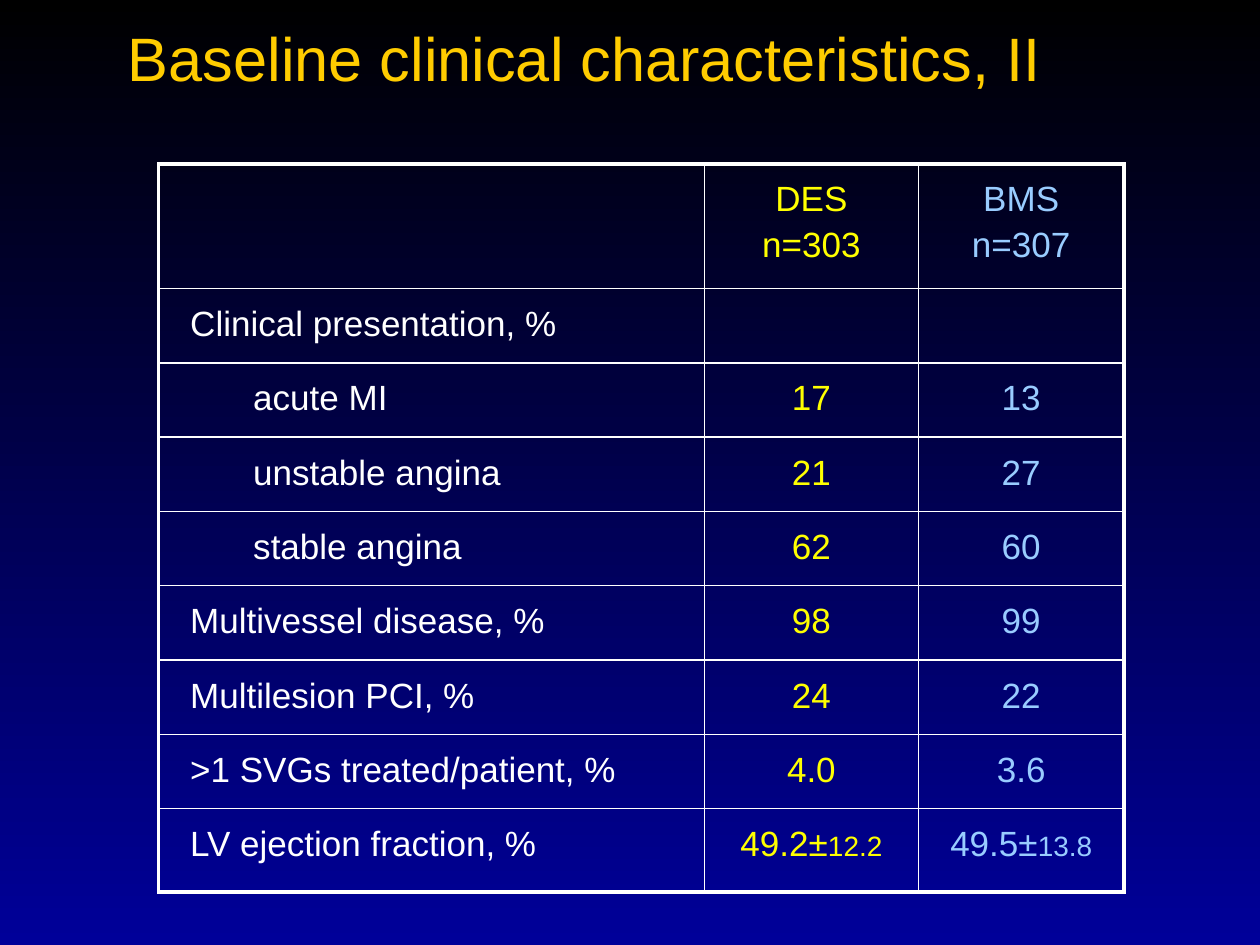
from dataclasses import dataclass

from lxml.etree import SubElement
from pptx import Presentation
from pptx.dml.color import RGBColor
from pptx.enum.text import MSO_ANCHOR, PP_ALIGN
from pptx.oxml.ns import qn
from pptx.util import Inches, Pt


@dataclass(frozen=True)
class Theme:
    font: str = "Arial"
    title: str = "FFCC00"
    label: str = "FFFFFF"
    des: str = "FFFF00"
    bms: str = "99CCFF"
    border: str = "FFFFFF"
    background: tuple = ("000000", "000099")
    title_size: int = 35
    body_size: int = 20
    deviation_size: int = 16
    outer_line: float = 2.25
    inner_line: float = 1


THEME = Theme()


def style_run(run, size, color):
    run.font.name = THEME.font
    run.font.size = Pt(size)
    run.font.bold = False
    run.font.color.rgb = RGBColor.from_string(color)


def add_border(cell, side, width):
    properties = cell._tc.get_or_add_tcPr()
    line = SubElement(properties, qn(f"a:ln{side}"), w=str(Pt(width)))
    fill = SubElement(line, qn("a:solidFill"))
    SubElement(fill, qn("a:srgbClr"), val=THEME.border)


presentation = Presentation()
presentation.slide_width = Inches(10)
presentation.slide_height = Inches(7.5)
slide = presentation.slides.add_slide(presentation.slide_layouts[6])

# Background, dark at the top
background = slide.background.fill
background.gradient()
background.gradient_angle = 270
for stop, color in zip(background.gradient_stops, THEME.background):
    stop.color.rgb = RGBColor.from_string(color)

# Table contents: label, DES, BMS; a tuple holds mean and deviation
rows = [
    ("", "DES\nn=303", "BMS\nn=307"),
    ("Clinical presentation, %", "", ""),
    ("acute MI", "17", "13"),
    ("unstable angina", "21", "27"),
    ("stable angina", "62", "60"),
    ("Multivessel disease, %", "98", "99"),
    ("Multilesion PCI, %", "24", "22"),
    (">1 SVGs treated/patient, %", "4.0", "3.6"),
    ("LV ejection fraction, %", ("49.2±", "12.2"), ("49.5±", "13.8")),
]
indented_labels = {"acute MI", "unstable angina", "stable angina"}
column_widths = [4.33, 1.7, 1.63]
row_heights = [0.99] + [0.59] * 7 + [0.66]
column_colors = [THEME.label, THEME.des, THEME.bms]
last_row, last_column = len(rows) - 1, len(column_widths) - 1

# Table grid
table = slide.shapes.add_table(
    len(rows), len(column_widths), Inches(1.26), Inches(1.3),
    Inches(sum(column_widths)), Inches(sum(row_heights)),
).table
table.first_row = False
table.horz_banding = False
for column, width in zip(table.columns, column_widths):
    column.width = Inches(width)
for row, height in zip(table.rows, row_heights):
    row.height = Inches(height)

# Table cells
for row_index, row in enumerate(rows):
    for column_index, content in enumerate(row):
        cell = table.cell(row_index, column_index)
        cell.margin_left = cell.margin_right = Inches(0.25)
        cell.margin_top = cell.margin_bottom = Inches(0.13)

        outer_sides = {
            "L": column_index == 0,
            "R": column_index == last_column,
            "T": row_index == 0,
            "B": row_index == last_row,
        }
        for side, is_outer in outer_sides.items():
            add_border(cell, side, THEME.outer_line if is_outer else THEME.inner_line)
        cell.fill.background()

        text, deviation = content if isinstance(content, tuple) else (content, "")
        cell.text_frame.text = text
        for index, paragraph in enumerate(cell.text_frame.paragraphs):
            if column_index > 0:
                paragraph.alignment = PP_ALIGN.CENTER
            if index > 0:
                paragraph.space_before = Pt(3.5)
            if text in indented_labels:
                paragraph._p.get_or_add_pPr().set("marL", str(Inches(0.5)))
            for run in paragraph.runs:
                style_run(run, THEME.body_size, column_colors[column_index])
            if deviation:
                run = paragraph.add_run()
                run.text = deviation
                style_run(run, THEME.deviation_size, column_colors[column_index])

# Title
title = slide.shapes.add_textbox(Inches(0.67), Inches(0.08), Inches(7.94), Inches(0.74))
title.text_frame.word_wrap = True
title.text_frame.vertical_anchor = MSO_ANCHOR.MIDDLE
title.text_frame.text = "Baseline clinical characteristics, II"
title_paragraph = title.text_frame.paragraphs[0]
title_paragraph.alignment = PP_ALIGN.CENTER
style_run(title_paragraph.runs[0], THEME.title_size, THEME.title)

presentation.save("out.pptx")
